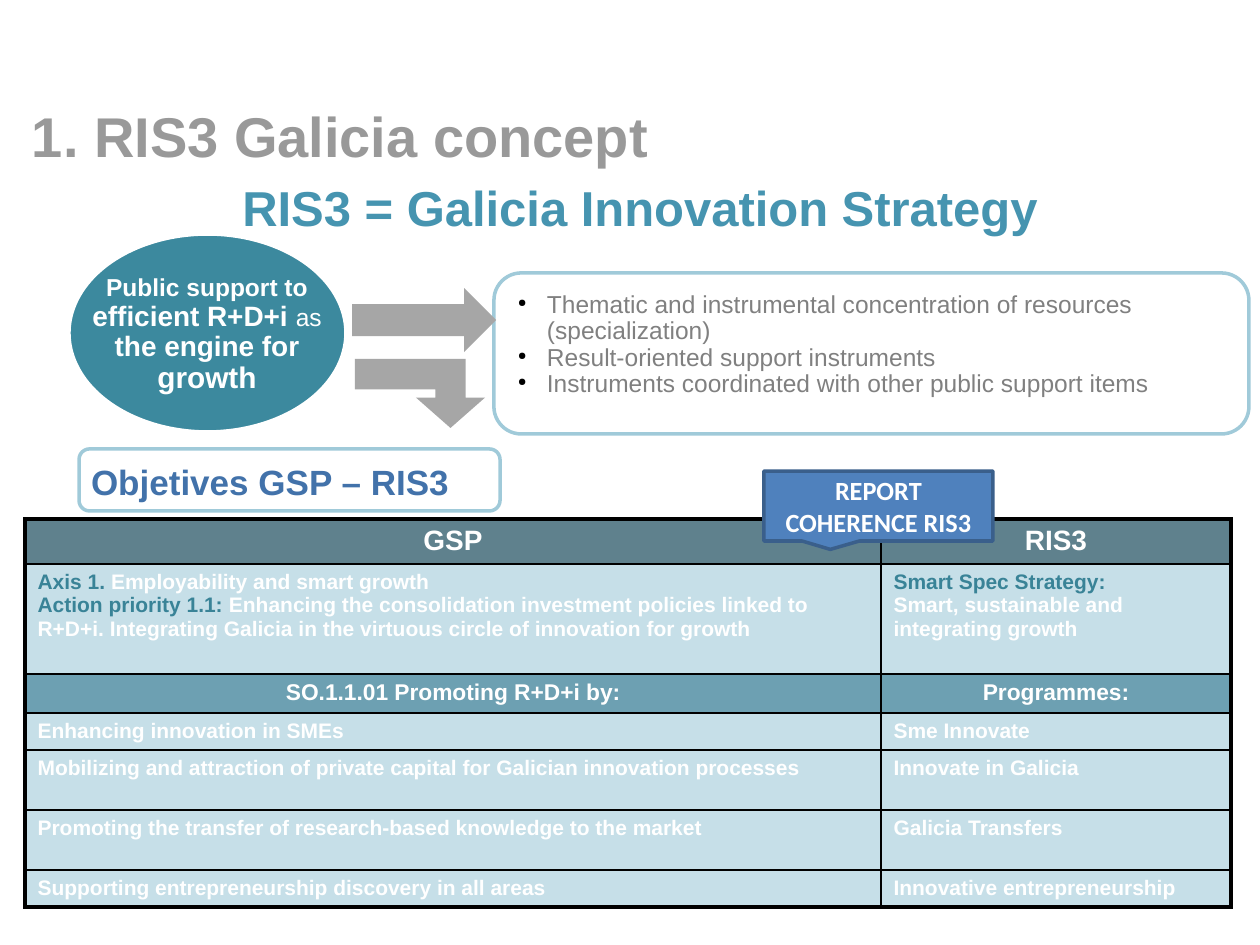
from dataclasses import dataclass

from pptx import Presentation, util as u
from pptx.dml import color
from pptx.enum import shapes, text
from pptx.oxml import parse_xml, ns

SCALE = 914400 / 126
SHAPE = shapes.MSO_SHAPE
CENTER = text.PP_ALIGN.CENTER


@dataclass(frozen=True)
class Theme:
    """Colours, type sizes and line widths of the slide."""
    font: str = "Arial"
    label_font: str = "Calibri"
    white: str = "FFFFFF"
    black: str = "000000"
    title: str = "999999"
    subtitle: str = "4694B0"
    teal: str = "3C899E"
    accent: str = "398397"
    pale: str = "A0CAD9"
    head: str = "2A5868"
    subhead: str = "3D8199"
    arrow: str = "A6A6A6"
    body: str = "808080"
    objective: str = "4272AA"
    callout: str = "4F81BD"
    callout_line: str = "3A5F8B"
    title_size: int = 32
    subtitle_size: int = 28
    objective_size: int = 20
    growth_size: int = 17
    large: int = 16
    label: int = 15
    medium: int = 14
    subhead_size: int = 13
    small: int = 12
    line: float = 2
    thin: float = 0.96
    thick: float = 2.21


THEME = Theme()


def px(value):
    """Turn pixels into EMU."""
    return u.Emu(round(value * SCALE))


def place(box, left, top, width, height):
    """Give the EMU bounds of a part inside a region box."""
    return [px(v) for v in (box[0] + left, box[1] + top, width, height)]


def assign(target, values):
    """Set attributes from a dict of format values."""
    for name, value in values.items():
        setattr(target, name, value)


def paint(fill, rgb, opacity=100):
    """Fill with a solid colour, see-through when opacity is below 100."""
    fill.solid()
    fill.fore_color.rgb = color.RGBColor.from_string(rgb)
    if opacity < 100:
        solid = fill._xPr.find(ns.qn("a:solidFill"))
        solid[0].append(parse_xml(f'<a:alpha {ns.nsdecls("a")} val="{opacity * 1000}"/>'))


def write(frame, paras, margins=None, anchor=text.MSO_ANCHOR.TOP, font=THEME.font,
          bullet=False, **layout):
    """Write paragraphs made of (text, size, colour, bold) spans."""
    frame.word_wrap = True
    if margins:
        sides = ("margin_left", "margin_top", "margin_right", "margin_bottom")
        assign(frame, dict(zip(sides, map(px, margins)), vertical_anchor=anchor))
    for index, spans in enumerate(paras):
        para = frame.paragraphs[0] if index == 0 else frame.add_paragraph()
        if bullet:
            add_bullet(para)
        assign(para, layout)
        for words, size, rgb, bold in spans:
            span = para.add_run()
            span.text = words
            assign(span.font, {"name": font, "size": u.Pt(size), "bold": bold})
            span.font.color.rgb = color.RGBColor.from_string(rgb)


def add_bullet(para):
    """Give a paragraph a small black bullet and a hanging indent."""
    props = para._p.get_or_add_pPr()
    props.set("marL", str(px(30)))
    props.set("indent", str(px(-29)))
    for tag in (f'buClr {ns.nsdecls("a")}><a:srgbClr val="{THEME.black}"/></a:buClr>',
                f'buSzPct {ns.nsdecls("a")} val="45000"/>',
                f'buChar {ns.nsdecls("a")} char="●"/>'):
        props.append(parse_xml("<a:" + tag))


def add_label(page, bounds, paras, **style):
    """Add a text box."""
    write(page.shapes.add_textbox(*bounds).text_frame, paras, **style)


def add_figure(page, kind, bounds, fill, line=None, opacity=100, adjust=()):
    """Add a preset shape without shadow."""
    figure = page.shapes.add_shape(kind, *bounds)
    figure.shadow.inherit = False
    paint(figure.fill, fill, opacity)
    if line:
        paint(figure.line.fill, line)
        figure.line.width = u.Pt(THEME.line)
    else:
        figure.line.fill.background()
    for index, value in enumerate(adjust):
        figure.adjustments[index] = value
    return figure


def add_panel(page, bounds):
    """Add a rounded panel with a pale outline."""
    add_figure(page, SHAPE.ROUNDED_RECTANGLE, bounds, THEME.white, THEME.pale, 90, [0.17])


def add_heading(page, box):
    """Place the title and the subtitle."""
    add_label(page, place(box, 0, 0, 917, 76),
              [[("1. RIS3 Galicia concept", THEME.title_size, THEME.title, True)]],
              margins=(10, 0, 0, 0), alignment=CENTER)
    add_label(page, place(box, 153, 69, 1220, 82),
              [[("RIS3 = Galicia Innovation Strategy", THEME.subtitle_size,
                 THEME.subtitle, True)]],
              margins=(13, 6, 13, 6), alignment=CENTER)


def add_support(page, box):
    """Place the ellipse about public support."""
    add_figure(page, SHAPE.OVAL, place(box, 0, 0, 277, 198), THEME.teal, THEME.white)
    spans = [("Public support to ", THEME.medium, True),
             ("efficient R+D+i ", THEME.large, True), ("as ", THEME.medium, False),
             ("the engine for ", THEME.large, True), ("growth", THEME.growth_size, True)]
    add_label(page, place(box, 10, 37, 256, 128),
              [[(words, size, THEME.white, bold) for words, size, bold in spans]],
              margins=(4, 4, 4, 4), anchor=text.MSO_ANCHOR.MIDDLE,
              alignment=CENTER, line_spacing=0.9)


def add_arrows(page, box):
    """Place the arrows leading to the traits and to the objectives."""
    straight = add_figure(page, SHAPE.DOWN_ARROW, place(box, 40, -40, 64, 144),
                          THEME.arrow, adjust=[0.5, 0.5])
    straight.rotation = 270
    bent = add_figure(page, SHAPE.BENT_UP_ARROW, place(box, 3, 71, 130, 69),
                      THEME.arrow, adjust=[0.44, 0.5, 0.44])
    bent._element.spPr.get_or_add_xfrm().set("flipV", "1")


def add_traits(page, box):
    """Place the panel with the bulleted traits."""
    add_panel(page, place(box, 0, 0, 755, 161))
    traits = ("Thematic and instrumental concentration of resources (specialization)",
              "Result-oriented support instruments",
              "Instruments coordinated with other public support items")
    add_label(page, place(box, 13, 9, 732, 166),
              [[(trait, THEME.medium, THEME.body, False)] for trait in traits],
              margins=(10, 10, 10, 10), bullet=True, line_spacing=0.9)


def add_objectives(page, box):
    """Place the panel naming the objectives."""
    add_panel(page, place(box, 0, 0, 421, 62))
    add_label(page, place(box, 2, 6, 412, 55),
              [[("Objetives GSP – RIS3", THEME.objective_size, THEME.objective, True)]],
              margins=(10, 10, 10, 10), line_spacing=0.9)


def add_callout(page, box):
    """Place the coherence report callout."""
    callout = add_figure(page, SHAPE.RECTANGULAR_CALLOUT, place(box, 0, 0, 229, 70),
                         THEME.callout, THEME.callout_line, adjust=[-0.21, 0.62])
    write(callout.text_frame, [[("REPORT COHERENCE RIS3", THEME.label, THEME.white, True)]],
          margins=(13, 6, 13, 6), anchor=text.MSO_ANCHOR.MIDDLE,
          font=THEME.label_font, alignment=CENTER)


def add_borders(cell, outer):
    """Draw the cell borders, thick on the outer sides."""
    props = cell._tc.get_or_add_tcPr()
    for index, side in enumerate("LRTB"):
        width = u.Pt(THEME.thick if side in outer else THEME.thin)
        props.insert(index, parse_xml(
            f'<a:ln{side} {ns.nsdecls("a")} w="{width}"><a:solidFill>'
            f'<a:srgbClr val="{THEME.black}"/></a:solidFill></a:ln{side}>'))


def add_objective_table(page, box):
    """Place the table that pairs GSP objectives with RIS3 programmes."""
    axis = [[("Axis 1. ", THEME.accent), ("Employability and smart growth", THEME.white)],
            [("Action priority 1.1: ", THEME.accent),
             ("Enhancing the consolidation investment policies linked to R+D+i. Integrating "
              "Galicia in the virtuous circle of innovation for growth", THEME.white)]]
    strategy = [[("Smart Spec Strategy:", THEME.accent)],
                [("Smart, sustainable and integrating growth", THEME.white)]]
    head = (THEME.head, 75, THEME.large, CENTER)
    subhead = (THEME.subhead, 75, THEME.subhead_size, CENTER)
    plain = (THEME.pale, 60, THEME.small, text.PP_ALIGN.LEFT)
    rows = [(45, head, "GSP", "RIS3"),
            (110, plain, axis, strategy),
            (39, subhead, "SO.1.1.01 Promoting R+D+i by:", "Programmes:"),
            (37, plain, "Enhancing innovation in SMEs", "Sme Innovate"),
            (60, plain, "Mobilizing and attraction of private capital for Galician "
             "innovation processes", "Innovate in Galicia"),
            (60, plain, "Promoting the transfer of research-based knowledge to the market",
             "Galicia Transfers"),
            (37, plain, "Supporting entrepreneurship discovery in all areas",
             "Innovative entrepreneurship")]
    table = page.shapes.add_table(len(rows), 2, *place(box, 0, 0, 1206, 388)).table
    assign(table, {"first_row": False, "horz_banding": False})
    for column, width in zip(table.columns, (856, 350)):
        column.width = px(width)
    for index, (height, (fill, opacity, size, align), *contents) in enumerate(rows):
        table.rows[index].height = px(height)
        edge = {0: "T", len(rows) - 1: "B"}.get(index, "")
        for number, content in enumerate(contents):
            cell = table.cell(index, number)
            paint(cell.fill, fill, opacity)
            add_borders(cell, "LR"[number] + edge)
            paras = [[(content, THEME.white)]] if isinstance(content, str) else content
            write(cell.text_frame, [[(words, size, rgb, True) for words, rgb in spans]
                                    for spans in paras], alignment=align)


def main():
    """Build the slide and save it."""
    deck = Presentation()
    assign(deck, {"slide_width": px(1260), "slide_height": px(945)})
    page = deck.slides.add_slide(deck.slide_layouts[6])
    add_objective_table(page, (25, 519))
    add_heading(page, (-123, 102))
    add_support(page, (69, 234))
    add_traits(page, (494, 273))
    add_objectives(page, (79, 449))
    add_arrows(page, (352, 288))
    add_callout(page, (764, 471))
    deck.save("out.pptx")


if __name__ == "__main__":
    main()
